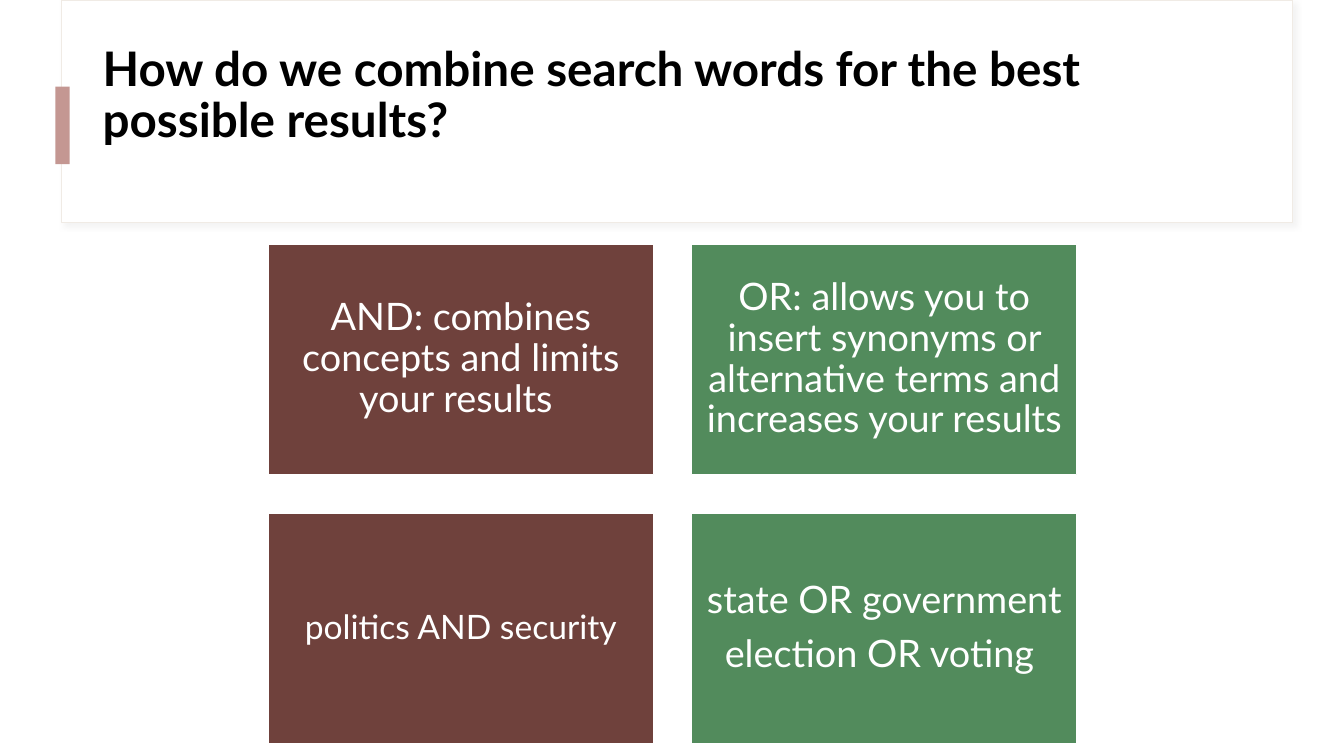
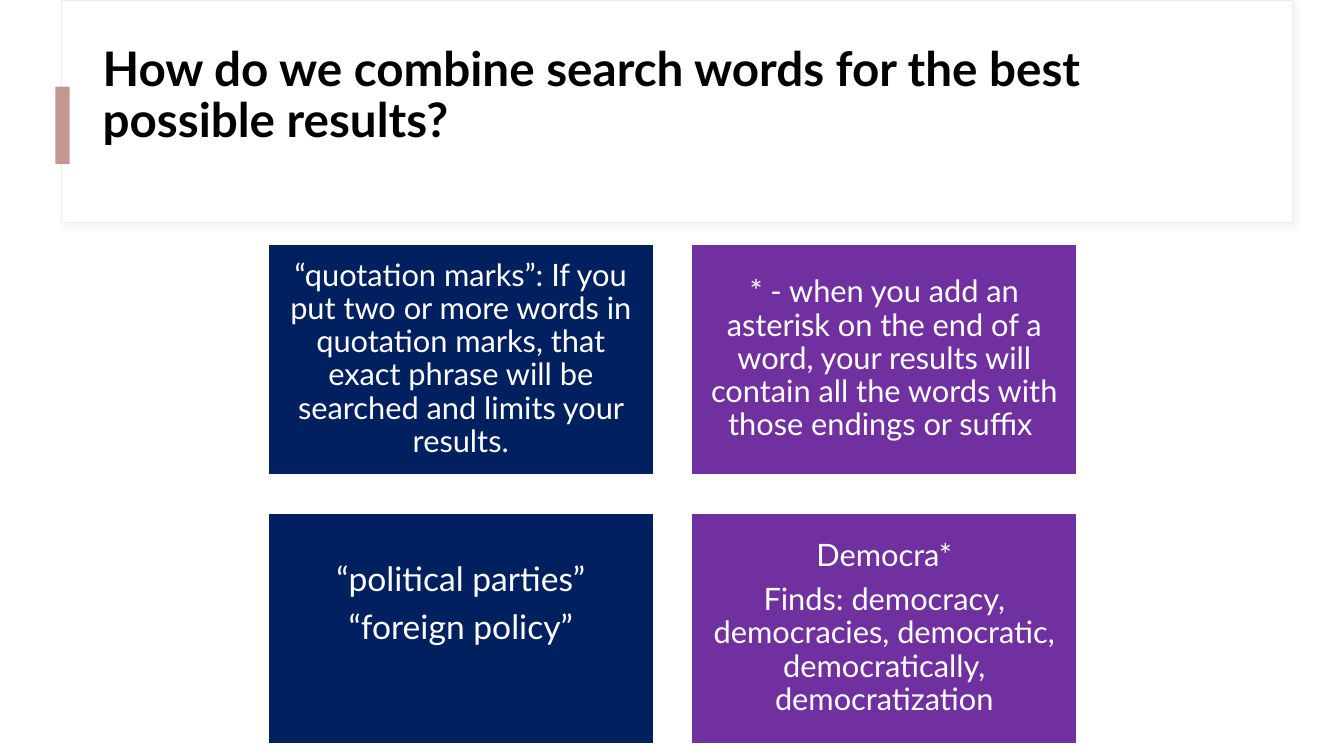
from dataclasses import dataclass

from lxml import etree
from pptx import Presentation
from pptx import util as u
from pptx.dml.color import RGBColor
from pptx.enum import shapes, text
from pptx.oxml.ns import qn

COLOURS = {
    "white": "FFFFFF", "black": "000000", "border": "F0EBE5", "shadow": "D9D9D9",
    "accent": "C49792", "brown": "6F413C", "green": "528B5C",
    "navy": "002060", "purple": "7030A0",
}
FONT = "Lato"
TITLE = "How do we combine search words for the best possible results?"
LINE_SPACING = 0.9
PARAGRAPH_GAP = 0.35  # share of the font size

# Card grid, in inches
GRID_LEFT, GRID_TOP = 2.66, 2.42
CARD_WIDTH, CARD_HEIGHT, CARD_GAP = 3.82, 2.29, 0.38
COLUMNS = 2


@dataclass(frozen=True)
class Card:
    colour: str
    size: int
    inset: float
    lines: tuple[str, ...]
    lift: float = 0  # extra space under the text, in inches


# Cards of each slide, row by row
SLIDES = [
    [
        Card("brown", 27, 0.11, ("AND: combines concepts and limits your results ",)),
        Card("green", 27, 0.11, ("OR: allows you to insert synonyms or alternative terms "
                                 "and increases your results",)),
        Card("brown", 24, 0.1, ("politics AND security",)),
        Card("green", 27, 0.11, ("state OR government", "election OR voting ")),
    ],
    [
        Card("navy", 22, 0.09, ("“quotation marks”: If you put two or more words in quotation "
                                "marks, that exact phrase will be searched and limits "
                                "your results.",)),
        Card("purple", 22, 0.09, ("* - when you add an asterisk on the end of a word, your results "
                                  "will contain all the words with those endings or suffix ",)),
        Card("navy", 24, 0.1, ("“political parties”", "“foreign policy”"), lift=0.48),
        Card("purple", 22, 0.09, ("Democra*", "Finds: democracy, democracies, democratic, "
                                  "democratically, democratization")),
    ],
]


def rgb(name: str) -> RGBColor:
    return RGBColor.from_string(COLOURS[name])


def add_rectangle(slide, left: float, top: float, width: float, height: float,
                  fill: str, line: str | None = None, line_width: float = 1):
    shape = slide.shapes.add_shape(
        shapes.MSO_SHAPE.RECTANGLE,
        u.Inches(left), u.Inches(top), u.Inches(width), u.Inches(height))
    shape.fill.solid()
    shape.fill.fore_color.rgb = rgb(fill)
    if line:
        shape.line.color.rgb = rgb(line)
        shape.line.width = u.Pt(line_width)
    else:
        shape.line.fill.background()
    shape.shadow.inherit = False
    return shape


def add_soft_shadow(shape) -> None:
    effects = shape.element.spPr.find(qn("a:effectLst"))
    shadow = etree.SubElement(effects, qn("a:outerShdw"), blurRad=str(u.Pt(4)),
                              dist=str(u.Pt(3)), dir="2700000", algn="tl", rotWithShape="0")
    colour = etree.SubElement(shadow, qn("a:srgbClr"), val=COLOURS["shadow"])
    etree.SubElement(colour, qn("a:alpha"), val="30000")


def add_run(paragraph, words: str, size: int, colour: str, bold: bool = False) -> None:
    paragraph.line_spacing = LINE_SPACING
    run = paragraph.add_run()
    run.text = words
    run.font.name = FONT
    run.font.size = u.Pt(size)
    run.font.bold = bold
    run.font.color.rgb = rgb(colour)


def add_header(slide) -> None:
    # Framed band with accent tab
    band = add_rectangle(slide, 0.61, 0, 12.21, 2.21, "white", "border", 0.75)
    add_soft_shadow(band)
    add_rectangle(slide, 0.55, 0.86, 0.14, 0.77, "accent")

    # Title
    box = slide.shapes.add_textbox(
        u.Inches(0.92), u.Inches(0.37), u.Inches(11.49), u.Inches(1.18))
    frame = box.text_frame
    frame.word_wrap = True
    frame.vertical_anchor = text.MSO_ANCHOR.MIDDLE
    add_run(frame.paragraphs[0], TITLE, 34, "black", bold=True)


def add_card(slide, card: Card, index: int) -> None:
    row, column = divmod(index, COLUMNS)
    shape = add_rectangle(
        slide, GRID_LEFT + column * (CARD_WIDTH + CARD_GAP),
        GRID_TOP + row * (CARD_HEIGHT + CARD_GAP),
        CARD_WIDTH, CARD_HEIGHT, card.colour, "white")
    frame = shape.text_frame
    frame.word_wrap = True
    frame.vertical_anchor = text.MSO_ANCHOR.MIDDLE
    frame.margin_left = frame.margin_right = frame.margin_top = u.Inches(card.inset)
    frame.margin_bottom = u.Inches(card.inset + card.lift)
    for number, line in enumerate(card.lines):
        paragraph = frame.add_paragraph() if number else frame.paragraphs[0]
        paragraph.alignment = text.PP_ALIGN.CENTER
        paragraph.space_after = u.Pt(PARAGRAPH_GAP * card.size)
        add_run(paragraph, line, card.size, "white")


def main() -> None:
    presentation = Presentation()
    presentation.slide_width = u.Inches(13.33)
    presentation.slide_height = u.Inches(7.5)
    for cards in SLIDES:
        slide = presentation.slides.add_slide(presentation.slide_layouts[6])
        add_header(slide)
        for index, card in enumerate(cards):
            add_card(slide, card, index)
    presentation.save("out.pptx")


if __name__ == "__main__":
    main()
